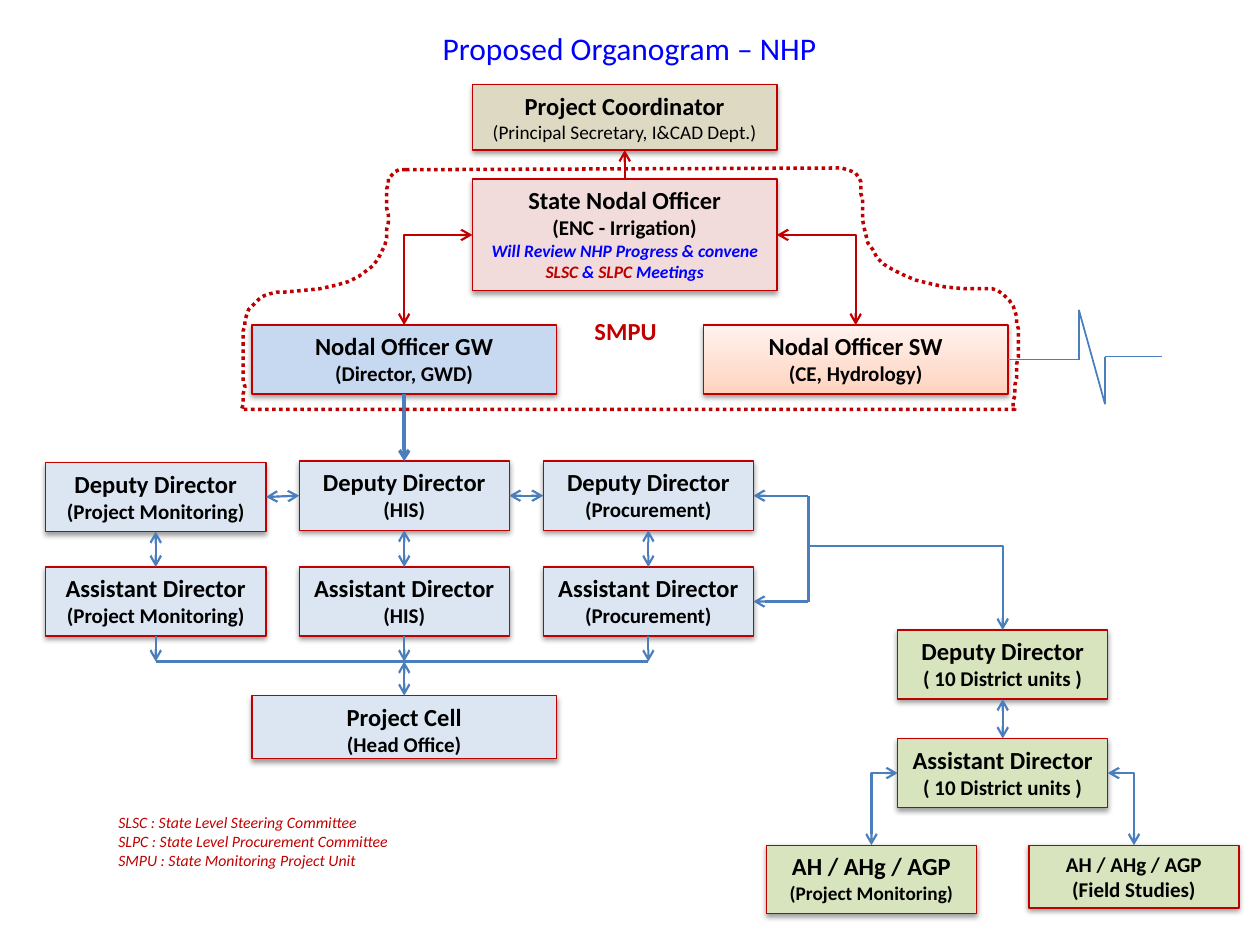
from itertools import pairwise
from pptx import Presentation
from pptx.dml.color import RGBColor
from pptx.enum.dml import MSO_LINE_DASH_STYLE as DASH
from pptx.enum.shapes import MSO_CONNECTOR as CONN, MSO_SHAPE as SHAPE
from pptx.enum.text import MSO_ANCHOR as ANCHOR, PP_ALIGN as ALIGN
from pptx.oxml.ns import qn
from pptx.util import Pt
from lxml.etree import SubElement as Sub

FONT = "Calibri"
BLACK, RED, BLUE, LINK = "000000", "C00000", "0000FF", "4B7EBC"
PALE, GREEN = "DCE6F2", "D7E4BD"
TOP, LEFT, BOTTOM, RIGHT = range(4)


def rgb(color):
    return RGBColor.from_string(color)


def add_run(p, text, size, color=BLACK, bold=False, italic=False):
    r = p.add_run()
    r.text = text
    r.font.name = FONT
    r.font.size = Pt(size)
    r.font.color.rgb = rgb(color)
    r.font.bold = bold
    r.font.italic = italic


def write(tf, paragraphs, align):
    tf.vertical_anchor = ANCHOR.TOP
    for i, runs in enumerate(paragraphs):
        p = tf.paragraphs[0] if i == 0 else tf.add_paragraph()
        p.alignment = align
        for run in runs:
            add_run(p, *run)


def add_shadow(sp):
    sp.shadow.inherit = False
    effects = sp._element.spPr.find(qn("a:effectLst"))
    shadow = Sub(effects, qn("a:outerShdw"), blurRad=str(Pt(3.1)), dist=str(Pt(1.6)),
                 dir="5400000", rotWithShape="0")
    color = Sub(shadow, qn("a:srgbClr"), val=BLACK)
    Sub(color, qn("a:alpha"), val="38000")


def fill_gradient(sp, stops, angle):
    sp.fill.gradient()
    sp.fill.gradient_angle = angle
    gs_list = sp._element.spPr.find(qn("a:gradFill")).find(qn("a:gsLst"))
    for gs in list(gs_list):
        gs_list.remove(gs)
    for percent, color in stops:
        gs = Sub(gs_list, qn("a:gs"), pos=str(percent * 1000))
        Sub(gs, qn("a:srgbClr"), val=color)


def add_box(s, x, y, w, h, fill, title, role, title_size=14, role_size=12,
            role_bold=True, extra=()):
    sp = s.shapes.add_shape(SHAPE.RECTANGLE, Pt(x), Pt(y), Pt(w), Pt(h))
    if isinstance(fill, str):
        sp.fill.solid()
        sp.fill.fore_color.rgb = rgb(fill)
    else:
        fill_gradient(sp, fill, 90)
    sp.line.color.rgb = rgb(RED)
    sp.line.width = Pt(0.75)
    add_shadow(sp)
    sp.text_frame.word_wrap = True
    write(sp.text_frame, [[(title, title_size, BLACK, True)],
                          [(role, role_size, BLACK, role_bold)], *extra], ALIGN.CENTER)
    return sp


def add_text(s, x, y, w, h, paragraphs, align=ALIGN.CENTER, wrap=True):
    tf = s.shapes.add_textbox(Pt(x), Pt(y), Pt(w), Pt(h)).text_frame
    tf.word_wrap = wrap
    write(tf, paragraphs, align)


def locate(end):
    first, second = end
    if isinstance(first, (int, float)):
        return Pt(first), Pt(second)
    mid_x, mid_y = first.left + first.width // 2, first.top + first.height // 2
    return {TOP: (mid_x, first.top), LEFT: (first.left, mid_y),
            BOTTOM: (mid_x, first.top + first.height),
            RIGHT: (first.left + first.width, mid_y)}[second]


def add_link(s, start, end, arrows="", color=LINK, width=1.25, bent=False):
    kind = CONN.ELBOW if bent else CONN.STRAIGHT
    c = s.shapes.add_connector(kind, *locate(start), *locate(end))
    for point, join in ((start, c.begin_connect), (end, c.end_connect)):
        if not isinstance(point[0], (int, float)):
            join(*point)
    c.line.color.rgb = rgb(color)
    c.line.width = Pt(width)
    sp_pr = c._element.spPr
    if bent:
        sp_pr.find(qn("a:prstGeom")).set("prst", "bentConnector2")
    ln = c.line._get_or_add_ln()
    for mark, tag in (("<", "a:headEnd"), (">", "a:tailEnd")):
        if mark in arrows:
            Sub(ln, qn(tag), type="arrow")
    Sub(sp_pr, qn("a:effectLst"))


def curve(p0, p1, p2, p3, steps=24):
    for i in range(1, steps + 1):
        t = i / steps
        u = 1 - t
        yield tuple(u**3 * a + 3 * u * u * t * b + 3 * u * t * t * c + t**3 * d
                    for a, b, c, d in zip(p0, p1, p2, p3))


def add_unit_outline(s):
    points = [(232, 97), (481, 96.5),
              *curve((481, 96.5), (512.5, 96.5), (456, 165), (564, 165)),
              *curve((564, 165), (593.5, 165), (577.5, 225.5), (579.5, 234)),
              (138.5, 234),
              *curve((138.5, 234), (143.5, 211), (126.5, 168.5), (162, 167)),
              *curve((162, 167), (259, 165), (200, 97), (232, 97))]
    fb = s.shapes.build_freeform(*points[0], scale=Pt(1))
    fb.add_line_segments(points[1:], close=True)
    sp = fb.convert_to_shape()
    sp.fill.background()
    sp.line.color.rgb = rgb(RED)
    sp.line.width = Pt(2)
    sp.line.dash_style = DASH.ROUND_DOT
    sp.shadow.inherit = False


def add_state_level(s):
    coordinator = add_box(s, 270, 48.25, 174, 37.5, "DDD9C3", "Project Coordinator",
                          "(Principal Secretary, I&CAD Dept.)", 14, 11, False)
    gw = add_box(s, 144, 185.75, 174, 39.5, "C6D9F1", "Nodal Officer GW", "(Director, GWD)")
    peach = [(0, "FFD2BD"), (35, "FFDED0"), (100, "FFF2ED")]
    sw = add_box(s, 402, 185.75, 174, 39.5, peach, "Nodal Officer SW", "(CE, Hydrology)")
    review = [(text, 10, color, True, True) for text, color in (
        ("Will Review NHP Progress & convene ", BLUE), ("SLSC ", RED), ("& ", BLUE),
        ("SLPC ", RED), ("Meetings", BLUE))]
    state = add_box(s, 270, 102.25, 174, 64, "F2DCDB", "State Nodal Officer",
                    "(ENC - Irrigation)", extra=[review])
    add_link(s, (state, LEFT), (gw, TOP), "<>", RED, bent=True)
    add_link(s, (state, RIGHT), (sw, TOP), "<>", RED, bent=True)
    add_link(s, (state, TOP), (coordinator, BOTTOM), ">", RED)
    pulse = [(sw, RIGHT), (616.5, 205.5), (616.5, 177), (631.5, 231),
             (631.5, 203.75), (664, 203.75)]
    for start, end in pairwise(pulse):
        add_link(s, start, end, width=1)
    return gw


def add_head_office(s, gw):
    bus_y = 378
    columns = [(26, 264.25, 126, "(Project Monitoring)"), (171, 263.5, 120, "(HIS)"),
               (310.5, 263.5, 120, "(Procurement)")]
    deputies = [add_box(s, x, y, w, 39.5, PALE, "Deputy Director", role)
                for x, y, w, role in columns]
    assistants = [add_box(s, x, 324, w, 39.5, PALE, "Assistant Director", role)
                  for x, _, w, role in columns]
    cell = add_box(s, 144, 397.5, 174, 36, PALE, "Project Cell", "(Head Office)")
    centers = [x + w / 2 for x, _, w, _ in columns]
    add_link(s, (gw, BOTTOM), (deputies[1], TOP), ">", width=2)
    for deputy, assistant, center in zip(deputies, assistants, centers):
        add_link(s, (deputy, BOTTOM), (assistant, TOP), "<>")
        add_link(s, (assistant, BOTTOM), (center, bus_y), ">")
    for left, right in pairwise(deputies):
        add_link(s, (left, RIGHT), (right, LEFT), "<>")
    add_link(s, (centers[0], bus_y), (centers[-1], bus_y))
    add_link(s, (cell, TOP), (centers[1], bus_y), "<>")
    return deputies[-1], assistants[-1]


def add_districts(s, deputy_hq, assistant_hq):
    units = "( 10 District units )"
    deputy = add_box(s, 513, 360, 120, 39.5, GREEN, "Deputy Director", units)
    assistant = add_box(s, 513, 422, 120, 39.5, GREEN, "Assistant Director", units)
    monitoring = add_box(s, 438, 483, 120, 39, GREEN, "AH / AHg / AGP",
                         "(Project Monitoring)", 14, 11)
    field = add_box(s, 588, 483, 120, 36, GREEN, "AH / AHg / AGP", "(Field Studies)", 12)
    add_link(s, (462, 283.25), (462, 343.75))
    add_link(s, (462, 283.25), (deputy_hq, RIGHT), ">")
    add_link(s, (462, 343.75), (assistant_hq, RIGHT), ">")
    add_link(s, (462, 312), (deputy, TOP), ">", bent=True)
    add_link(s, (deputy, BOTTOM), (assistant, TOP), "<>")
    add_link(s, (assistant, LEFT), (monitoring, TOP), "<>", bent=True)
    add_link(s, (assistant, RIGHT), (field, TOP), "<>", bent=True)


def main():
    prs = Presentation()
    prs.slide_width, prs.slide_height = Pt(720), Pt(540)
    s = prs.slides.add_slide(prs.slide_layouts[6])
    gw = add_state_level(s)
    add_districts(s, *add_head_office(s, gw))
    add_text(s, 214, 13, 291.5, 29, [[("Proposed Organogram – NHP", 18, BLUE)]])
    add_text(s, 325.5, 177, 64, 24.5, [[("SMPU", 14, RED, True)]])
    add_unit_outline(s)
    legend = ["SLSC : State Level Steering Committee",
              "SLPC : State Level Procurement Committee",
              "SMPU : State Monitoring Project Unit"]
    add_text(s, 60.5, 461, 170.5, 40, [[(line, 9, RED, False, True)] for line in legend],
             ALIGN.LEFT, wrap=False)
    prs.save("out.pptx")


if __name__ == "__main__":
    main()
